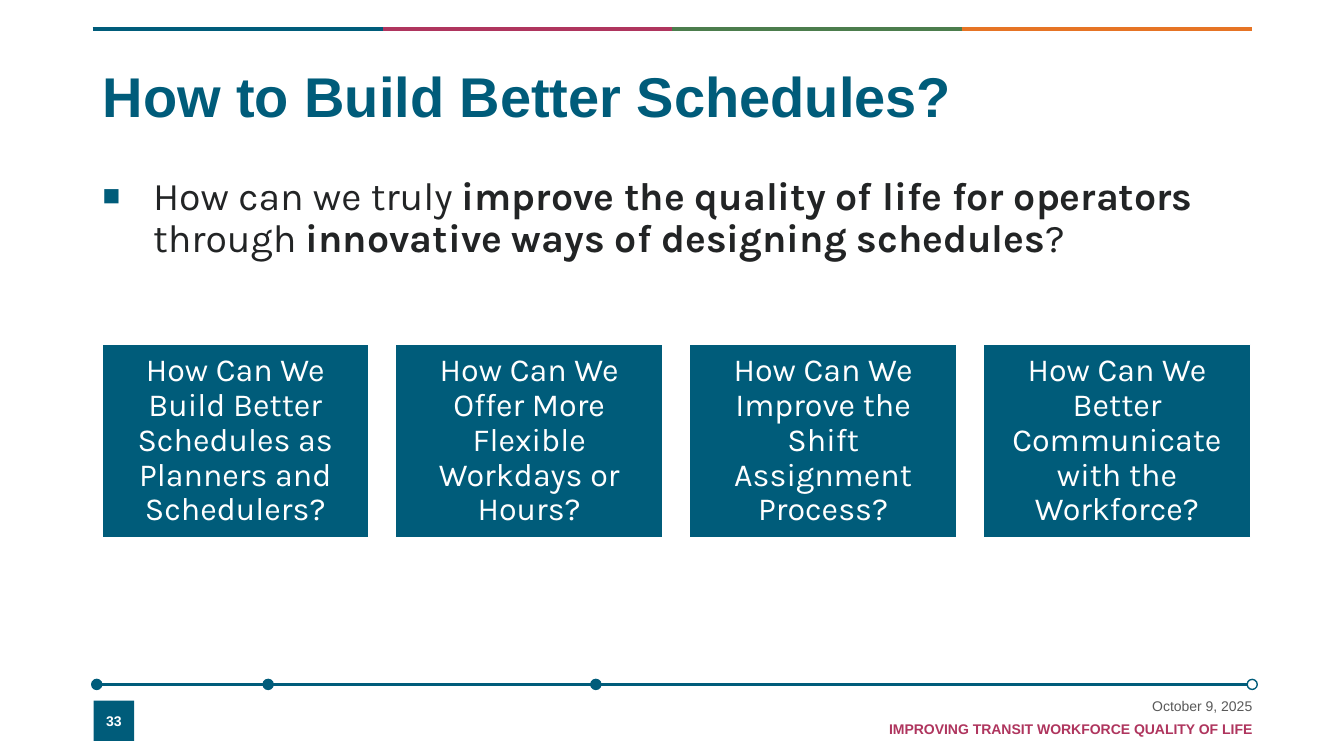
from pptx import Presentation, util as u
from pptx.dml.color import RGBColor
from pptx.enum import shapes, text
from pptx.oxml import parse_xml
from pptx.oxml.ns import nsdecls

TEAL = RGBColor(0x00, 0x5C, 0x7A)
BERRY = RGBColor(0xAF, 0x35, 0x5E)
GREEN = RGBColor(0x4C, 0x7D, 0x4D)
ORANGE = RGBColor(0xE6, 0x74, 0x25)
INK = RGBColor(0x22, 0x24, 0x25)
GRAY = RGBColor(0x59, 0x59, 0x59)
WHITE = RGBColor(0xFF, 0xFF, 0xFF)

WIDTH, HEIGHT = 13.33, 7.5
LEFT, CONTENT = 0.92, 11.5
RIGHT = LEFT + CONTENT


def write(shape, runs, font="Arial", size=10, color=INK, bold=False,
          align=text.PP_ALIGN.LEFT, anchor=text.MSO_ANCHOR.MIDDLE,
          insets=(0.1, 0.05, 0.1, 0.05), spacing=1.0, bullet=None):
    """Fill a shape with one paragraph; runs is a string or (words, bold) pairs."""
    frame = shape.text_frame
    frame.word_wrap = True
    frame.vertical_anchor = anchor
    (frame.margin_left, frame.margin_top,
     frame.margin_right, frame.margin_bottom) = map(u.Inches, insets)
    paragraph = frame.paragraphs[0]
    paragraph.alignment = align
    paragraph.line_spacing = spacing
    if bullet:
        properties = paragraph._p.get_or_add_pPr()
        properties.set("marL", str(u.Inches(0.5)))
        properties.set("indent", str(-u.Inches(0.5)))
        for xml in (f'<a:buClr {nsdecls("a")}><a:srgbClr val="{TEAL}"/></a:buClr>',
                    f'<a:buSzPct {nsdecls("a")} val="75000"/>',
                    f'<a:buFont {nsdecls("a")} typeface="Arial"/>',
                    f'<a:buChar {nsdecls("a")} char="{bullet}"/>'):
            properties.append(parse_xml(xml))
    for words, heavy in [(runs, bold)] if isinstance(runs, str) else runs:
        run = paragraph.add_run()
        run.text = words
        run.font.name, run.font.size, run.font.bold = font, u.Pt(size), heavy
        run.font.color.rgb = color


def draw(kind, box, fill=TEAL, line=None):
    """Draw a line (box holds its ends) or a filled shape (left, top, width, height)."""
    box = [u.Inches(length) for length in box]
    if kind == "line":
        shape = slide.shapes.add_connector(shapes.MSO_CONNECTOR.STRAIGHT, *box)
        shape._element.spPr.append(parse_xml(f'<a:effectLst {nsdecls("a")}/>'))
        shape.line.color.rgb, shape.line.width = fill, u.Pt(line)
        return shape
    shape = slide.shapes.add_shape(kind, *box)
    shape.shadow.inherit = False
    shape.fill.solid()
    shape.fill.fore_color.rgb = fill
    if line is None:
        shape.line.fill.background()
    else:
        shape.line.color.rgb, shape.line.width = line, u.Pt(1)
    return shape


presentation = Presentation()
presentation.slide_width = u.Inches(WIDTH)
presentation.slide_height = u.Inches(HEIGHT)
slide = presentation.slides.add_slide(presentation.slide_layouts[6])

# Four-colour rule along the top
segment = CONTENT / 4
for column, color in enumerate((TEAL, BERRY, GREEN, ORANGE)):
    start = LEFT + column * segment
    draw("line", (start, 0.29, start + segment, 0.29), color, 3)

# Timeline above the footer
TIMELINE, DOT = 6.79, 0.1
draw("line", (LEFT, TIMELINE, RIGHT, TIMELINE), TEAL, 2)
for center, color in ((0.96, TEAL), (2.66, TEAL), (5.91, TEAL), (RIGHT, WHITE)):
    draw(shapes.MSO_SHAPE.OVAL,
         (center - DOT / 2, TIMELINE - DOT / 2, DOT, DOT), color, TEAL)

# Title, question and footer lines
question = [("How can we truly ", False),
            ("improve the quality of life for operators ", True),
            ("through ", False),
            ("innovative ways of designing schedules", True),
            ("?", False)]
footer = dict(align=text.PP_ALIGN.RIGHT, insets=(0.1, 0.05, 0, 0.05))
for box, words, style in (
    ((LEFT, 0.4, CONTENT, 1.18), "How to Build Better Schedules?",
     dict(size=40, color=TEAL, bold=True, spacing=0.9)),
    ((LEFT, 1.7, CONTENT, 4.94), question,
     dict(font="Karla", size=28, anchor=text.MSO_ANCHOR.TOP, spacing=0.9, bullet="■")),
    ((RIGHT - 3, 6.91, 3, 0.18), "October 9, 2025", dict(color=GRAY, **footer)),
    ((RIGHT - 5.96, 7.12, 5.96, 0.22), "IMPROVING TRANSIT WORKFORCE QUALITY OF LIFE",
     dict(color=BERRY, bold=True, **footer)),
):
    write(slide.shapes.add_textbox(*map(u.Inches, box)), words, **style)

# Page number
write(draw(shapes.MSO_SHAPE.RECTANGLE, (0.93, 6.95, 0.4, 0.4)), "33",
      color=WHITE, bold=True, align=text.PP_ALIGN.CENTER, insets=(0, 0, 0, 0))

# Row of four question cards
CARD_LEFT, CARD_WIDTH, CARD_HEIGHT = 1.01, 2.65, 1.91
CARD_PITCH = CARD_WIDTH * 1.1
for column, words in enumerate((
    "How Can We Build Better Schedules as Planners and Schedulers?",
    "How Can We Offer More Flexible Workdays or Hours?",
    "How Can We Improve the Shift Assignment Process?",
    "How Can We Better Communicate with the Workforce?",
)):
    card = draw(shapes.MSO_SHAPE.RECTANGLE,
                (CARD_LEFT + column * CARD_PITCH, 3.42, CARD_WIDTH, CARD_HEIGHT),
                TEAL, WHITE)
    write(card, words, font="Karla", size=23, color=WHITE, spacing=0.9,
          align=text.PP_ALIGN.CENTER, insets=(0.1, 0.1, 0.1, 0.1))

presentation.save("out.pptx")
